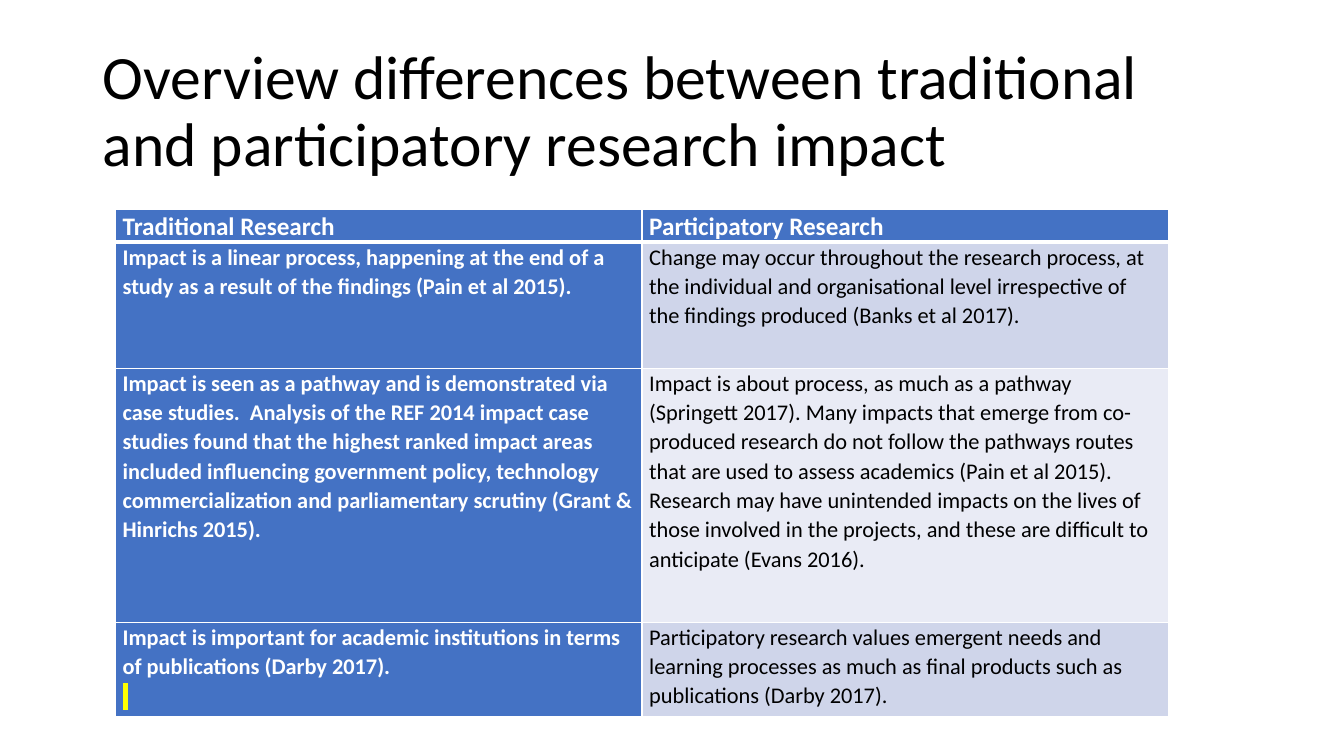
import pptx
import pptx.dml.color
import pptx.enum.text
import pptx.oxml
import pptx.oxml.ns
import pptx.util
from lxml import etree

Cm = pptx.util.Cm
Pt = pptx.util.Pt
RGBColor = pptx.dml.color.RGBColor
qn = pptx.oxml.ns.qn

BLACK = RGBColor(0x00, 0x00, 0x00)
WHITE = RGBColor(0xFF, 0xFF, 0xFF)
BLUE = RGBColor(0x44, 0x72, 0xC4)
BAND_DARK = RGBColor(0xCF, 0xD5, 0xEA)
BAND_LIGHT = RGBColor(0xE9, 0xEB, 0xF5)
YELLOW = RGBColor(0xFF, 0xFF, 0x00)

TITLE = "Overview differences between traditional and participatory research impact"
ROW_HEIGHTS = [0.76, 3.18, 6.4, 2.39]
COMPARISON = [
    ("Traditional Research", "Participatory Research"),
    (
        "Impact is a linear process, happening at the end of a study as a result "
        "of the findings (Pain et al 2015).",
        "Change may occur throughout the research process, at the individual and "
        "organisational level irrespective of the findings produced (Banks et al 2017).",
    ),
    (
        "Impact is seen as a pathway and is demonstrated via case studies.  Analysis "
        "of the REF 2014 impact case studies found that the highest ranked impact "
        "areas included influencing government policy, technology commercialization "
        "and parliamentary scrutiny (Grant & Hinrichs 2015).",
        "Impact is about process, as much as a pathway (Springett 2017). Many impacts "
        "that emerge from co-produced research do not follow the pathways routes that "
        "are used to assess academics (Pain et al 2015). Research may have unintended "
        "impacts on the lives of those involved in the projects, and these are "
        "difficult to anticipate (Evans 2016).",
    ),
    (
        "Impact is important for academic institutions in terms of publications "
        "(Darby 2017).",
        "Participatory research values emergent needs and learning processes as much "
        "as final products such as publications (Darby 2017).",
    ),
]


def write(para, text, size=16, color=BLACK, bold=False, spacing=1.07,
          font="Calibri", highlight=None):
    para.line_spacing = spacing
    span = para.add_run()
    span.text = text
    span.font.size = Pt(size)
    span.font.bold = bold
    span.font.color.rgb = color
    span.font.name = font
    if highlight is not None:
        mark = etree.Element(qn("a:highlight"))
        etree.SubElement(mark, qn("a:srgbClr"), val=str(highlight))
        span.font._element.find(qn("a:latin")).addprevious(mark)


class Slide:
    def __init__(self, deck):
        self.page = deck.slides.add_slide(deck.slide_layouts[6])

    def title(self, text, left, top, width, height):
        box = self.page.shapes.add_textbox(Cm(left), Cm(top), Cm(width), Cm(height))
        frame = box.text_frame
        frame.word_wrap = True
        frame.vertical_anchor = pptx.enum.text.MSO_ANCHOR.MIDDLE
        write(frame.paragraphs[0], text, size=44, spacing=0.9)

    def border(self, cell, **widths):
        properties = cell._tc.get_or_add_tcPr()
        for index, side in enumerate("LRTB"):
            line = etree.Element(qn(f"a:ln{side}"), w=str(Pt(widths.get(side, 1))))
            fill = etree.SubElement(line, qn("a:solidFill"))
            etree.SubElement(fill, qn("a:srgbClr"), val=str(WHITE))
            properties.insert(index, line)

    def table(self, rows, heights, left, top, column_width):
        columns = len(rows[0])
        grid = self.page.shapes.add_table(
            len(rows), columns, Cm(left), Cm(top),
            Cm(column_width * columns), Cm(sum(heights))).table
        for column in grid.columns:
            column.width = Cm(column_width)
        for row, (texts, height) in enumerate(zip(rows, heights)):
            grid.rows[row].height = Cm(height)
            for column, text in enumerate(texts):
                cell = grid.cell(row, column)
                cell.margin_left = cell.margin_right = Cm(0.18)
                cell.margin_top = cell.margin_bottom = 0
                heading = row == 0 or column == 0
                cell.fill.solid()
                band = BAND_DARK if row % 2 else BAND_LIGHT
                cell.fill.fore_color.rgb = BLUE if heading else band
                self.border(cell, T=3 if row == 1 else 1, B=3 if row == 0 else 1)
                write(cell.text_frame.paragraphs[0], text, size=16 if row else 18,
                      color=WHITE if heading else BLACK, bold=heading)
        return grid


def main():
    deck = pptx.Presentation()
    deck.slide_width = Cm(33.87)
    deck.slide_height = Cm(19.05)
    slide = Slide(deck)
    slide.title(TITLE, 2.34, 1.01, 29.21, 3.68)
    grid = slide.table(COMPARISON, ROW_HEIGHTS, 2.91, 5.28, 13.27)
    last_cell = grid.cell(len(COMPARISON) - 1, 0)
    write(last_cell.text_frame.add_paragraph(), " ", color=WHITE, bold=True,
          highlight=YELLOW)
    deck.save("out.pptx")


if __name__ == "__main__":
    main()
